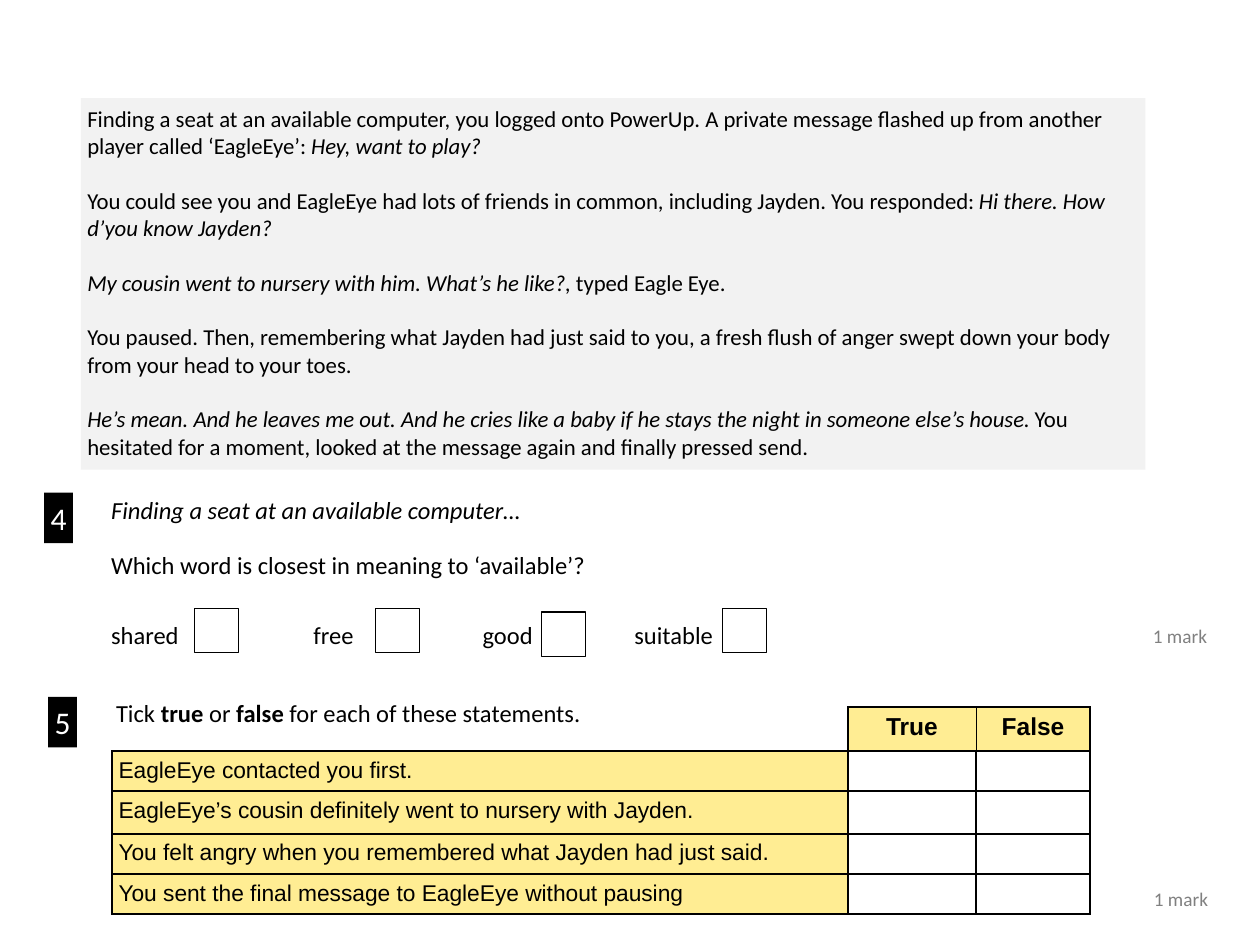
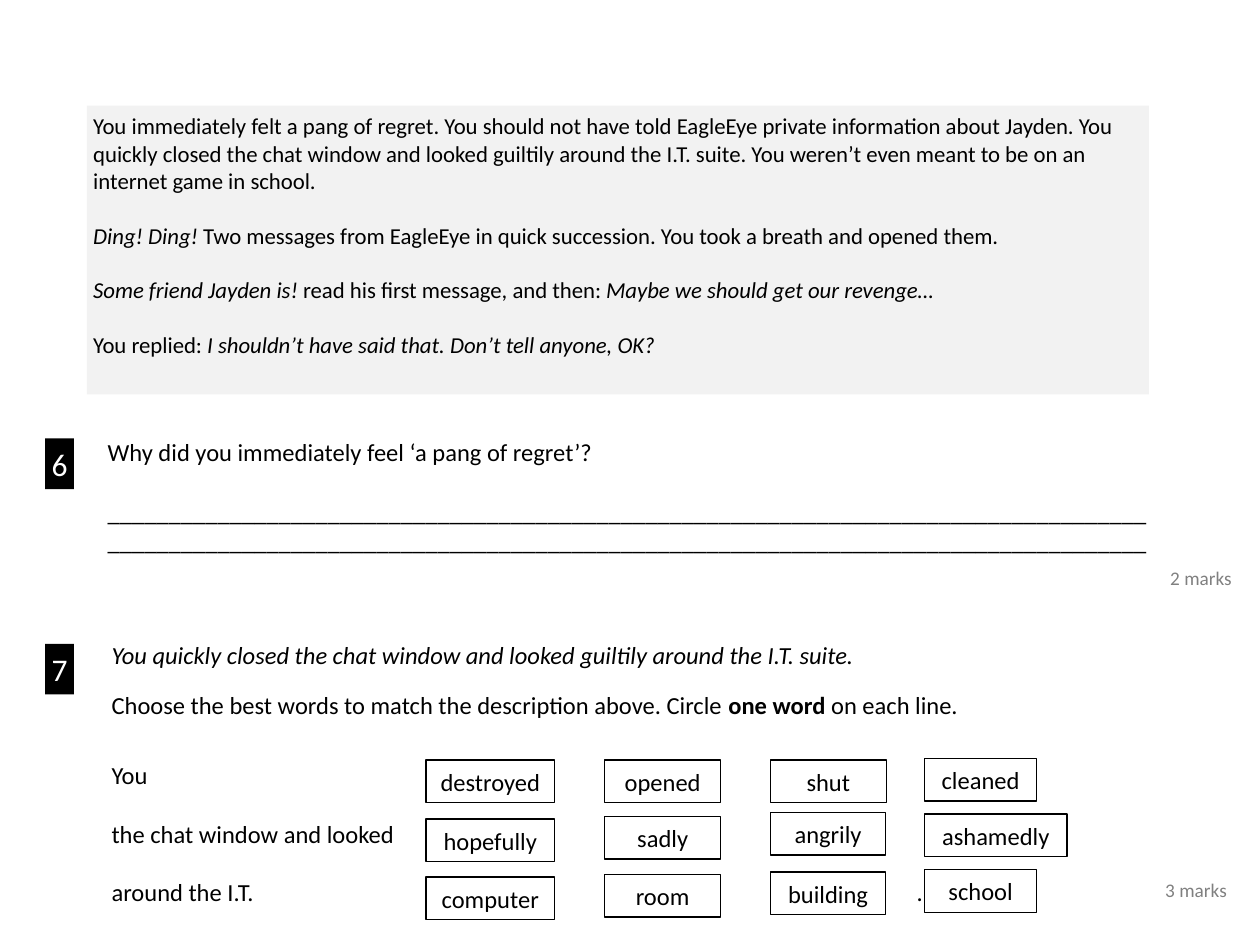
from dataclasses import dataclass

import pptx
import pptx.dml.color
import pptx.enum.shapes
import pptx.enum.text
import pptx.oxml
import pptx.oxml.ns
import pptx.util

Cm = pptx.util.Cm
Pt = pptx.util.Pt
ALIGN = pptx.enum.text.PP_ALIGN
ANCHOR = pptx.enum.text.MSO_ANCHOR

COLOURS = {
    "ink": "000000",
    "paper": "FFFFFF",
    "panel": "F2F2F2",
    "cream": "FFED93",
    "mark": "808080",
}
BODY, GRID = "Calibri", "Arial"
INSET = 0.13


@dataclass
class Box:
    """A block of text; *...* is italic and #...# is bold."""
    left: float
    top: float
    width: float
    height: float
    lines: tuple[str, ...] = ()
    gaps: tuple[float, ...] = ()
    size: float = 14
    ink: str = "ink"
    fill: str = ""
    edge: bool = False
    centre: bool = False
    wrap: bool = True
    side: float = INSET


def shade(name: str) -> pptx.dml.color.RGBColor:
    return pptx.dml.color.RGBColor.from_string(COLOURS[name])


def write(para, line: str, size: float, ink: str, face: str = BODY) -> None:
    parts = [
        (text, n % 2 == 1, m % 2 == 1)
        for n, chunk in enumerate(line.split("*"))
        for m, text in enumerate(chunk.split("#"))
        if text
    ]
    para.text = parts[0][0]
    for text, _, _ in parts[1:]:
        para.add_run().text = text
    for run, (_, slant, bold) in zip(para.runs, parts):
        run.font.name = face
        run.font.size = Pt(size)
        run.font.italic = slant
        run.font.bold = bold
        run.font.color.rgb = shade(ink)


def draw(slide, box: Box) -> None:
    place = [Cm(n) for n in (box.left, box.top, box.width, box.height)]
    if box.fill or box.edge:
        shape = slide.shapes.add_shape(
            pptx.enum.shapes.MSO_SHAPE.RECTANGLE, *place)
        shape.shadow.inherit = False
        if box.fill:
            shape.fill.solid()
            shape.fill.fore_color.rgb = shade(box.fill)
        else:
            shape.fill.background()
        if box.edge:
            shape.line.color.rgb = shade("ink")
            shape.line.width = Pt(0.75)
        else:
            shape.line.fill.background()
    else:
        shape = slide.shapes.add_textbox(*place)
    if not box.lines:
        return
    frame = shape.text_frame
    frame.word_wrap = box.wrap
    frame.margin_left = frame.margin_right = Cm(box.side)
    frame.margin_top = frame.margin_bottom = Cm(INSET)
    frame.vertical_anchor = ANCHOR.MIDDLE if box.centre else ANCHOR.TOP
    frame.text = "\n".join(box.lines)
    for n, (para, line) in enumerate(zip(frame.paragraphs, box.lines)):
        write(para, line, box.size, box.ink)
        para.alignment = ALIGN.CENTER if box.centre else ALIGN.LEFT
        if n and box.gaps:
            para.space_before = Pt(box.gaps[n - 1])


# Kinds of block that recur on both slides
def panel(left: float, top: float, width: float, height: float,
          *lines: str) -> Box:
    gaps = (15.6,) * (len(lines) - 1)
    return Box(left, top, width, height, lines, gaps, 13, fill="panel")


def badge(left: float, top: float, text: str) -> Box:
    return Box(left, top, 0.58, 1.02, (text,), size=18, ink="paper",
               fill="ink", wrap=False)


def score(left: float, top: float, width: float, text: str) -> Box:
    return Box(left, top, width, 0.74, (text,), size=11, ink="mark",
               wrap=False, side=0.25)


def label(left: float, top: float, text: str) -> Box:
    return Box(left, top, 2.2, 0.86, (text,), wrap=False)


def tick(left: float, top: float) -> Box:
    return Box(left, top, 0.89, 0.89, edge=True)


def word(left: float, top: float, width: float, text: str) -> Box:
    return Box(left, top, width, 0.86, (text,), fill="paper", edge=True,
               centre=True)


# True or false table
WIDTHS = (14.83, 2.59, 2.29)
HEIGHTS = (0.89, 0.81, 0.86, 0.81, 0.81)
ROWS = (
    ("", "#True#", "#False#"),
    ("EagleEye contacted you first.", "", ""),
    ("EagleEye’s cousin definitely went to nursery with Jayden.", "", ""),
    ("You felt angry when you remembered what Jayden had just said.", "", ""),
    ("You sent the final message to EagleEye without pausing", "", ""),
)


def border(cell, side: str, name: str, width: float) -> None:
    cell._tc.get_or_add_tcPr().append(pptx.oxml.parse_xml(
        f'<a:ln{side} {pptx.oxml.ns.nsdecls("a")} w="{Pt(width)}">'
        f'<a:solidFill><a:srgbClr val="{COLOURS[name]}"/></a:solidFill>'
        f'</a:ln{side}>'))


def edges(cell, row: int, col: int) -> None:
    blank = row == 0 and col == 0
    thick = 1.5 if row and col else 1
    widths = {"L": 1 if col == 1 else thick, "R": thick,
              "T": 1 if row == 1 else thick, "B": thick}
    for side, width in widths.items():
        if blank and side in "LT":
            border(cell, side, "paper", 1.5)
        else:
            border(cell, side, "ink", width)


def grid(slide, left: float, top: float) -> None:
    table = slide.shapes.add_table(
        len(ROWS), len(WIDTHS), Cm(left), Cm(top),
        Cm(sum(WIDTHS)), Cm(sum(HEIGHTS))).table
    table.first_row = table.horz_banding = False
    for col, width in zip(table.columns, WIDTHS):
        col.width = Cm(width)
    for r, (line, height) in enumerate(zip(ROWS, HEIGHTS)):
        table.rows[r].height = Cm(height)
        for c, text in enumerate(line):
            cell = table.cell(r, c)
            edges(cell, r, c)
            cell.margin_left = cell.margin_right = Cm(INSET)
            cell.margin_top = cell.margin_bottom = Cm(INSET)
            para = cell.text_frame.paragraphs[0]
            if not text:
                cell.fill.background()
                para._p.get_or_add_endParaRPr().set("sz", "1000")
                continue
            cell.fill.solid()
            cell.fill.fore_color.rgb = shade("cream")
            write(para, text, 13 if r else 14, "ink", GRID)
            para.alignment = ALIGN.LEFT if r else ALIGN.CENTER


# Slide 1: questions 4 and 5
FIRST = [
    panel(
        1.63, 1.98, 21.46, 7.49,
        "Finding a seat at an available computer, you logged onto PowerUp. "
        "A private message flashed up from another player called "
        "‘EagleEye’: *Hey, want to play?*",
        "You could see you and EagleEye had lots of friends in common, "
        "including Jayden. You responded: "
        "*Hi there. How d’you know Jayden?*",
        "*My cousin went to nursery with him. What’s he like?, *"
        "typed Eagle Eye.",
        "You paused. Then, remembering what Jayden had just said to you, "
        "a fresh flush of anger swept down your body from your head to "
        "your toes.",
        "*He’s mean. And he leaves me out. And he cries like a baby if he "
        "stays the night in someone else’s house. *You hesitated for a "
        "moment, looked at the message again and finally pressed send.",
    ),
    badge(0.89, 9.93, "4"),
    Box(2.11, 9.85, 22.71, 2.1,
        ("*Finding a seat at an available computer…*",
         "Which word is closest in meaning to ‘available’?"), (14.6,)),
    label(2.11, 12.37, "shared"), tick(3.92, 12.27),
    label(6.19, 12.37, "free"), tick(7.57, 12.27),
    label(9.6, 12.37, "good"), tick(10.92, 12.34),
    label(12.66, 12.37, "suitable"), tick(14.56, 12.27),
    badge(0.97, 14.05, "5"),
    Box(2.21, 13.94, 14.5, 0.86,
        ("Tick #true# or #false# for each of these statements.",)),
    score(22.99, 12.46, 1.63, "1 mark"),
    score(23.01, 17.75, 1.63, "1 mark"),
]

# Slide 2: questions 6 and 7
RULE = "_" * 85
NEXT = [
    panel(
        1.75, 2.13, 21.41, 5.82,
        "You immediately felt a pang of regret. You should not have told "
        "EagleEye private information about Jayden. You quickly closed the "
        "chat window and looked guiltily around the I.T. suite. You weren’t "
        "even meant to be on an internet game in school.",
        "*Ding! Ding! *Two messages from EagleEye in quick succession. "
        "You took a breath and opened them.",
        "*Some friend Jayden is! *read his first message, and then: "
        "*Maybe we should get our revenge…*",
        "You replied: *I shouldn’t have said that. Don’t tell anyone, OK?*",
    ),
    badge(0.91, 8.84, "6"),
    Box(2.04, 8.69, 21.9, 3.84,
        ("Why did you immediately feel ‘a pang of regret’?", RULE, RULE),
        (17.1, 0)),
    score(23.34, 11.28, 1.78, "2 marks"),
    badge(0.91, 12.98, "7"),
    Box(2.12, 12.78, 21.9, 5.69,
        ("*You quickly closed the chat window and looked guiltily around "
         "the I.T. suite.*",
         "Choose the best words to match the description above. "
         "Circle# one word #on each line.",
         "You", "the chat window and looked", "around the I.T."),
        (11.8, 23, 16.8, 16.4)),
    Box(18.35, 17.56, 0.5, 0.86, (".",)),
    word(8.59, 15.32, 2.59, "destroyed"),
    word(12.19, 15.32, 2.34, "opened"),
    word(15.53, 15.32, 2.34, "shut"),
    word(18.64, 15.29, 2.26, "cleaned"),
    word(8.59, 16.51, 2.59, "hopefully"),
    word(12.19, 16.46, 2.34, "sadly"),
    word(15.54, 16.38, 2.31, "angrily"),
    word(18.64, 16.41, 2.87, "ashamedly"),
    word(8.59, 17.68, 2.59, "computer"),
    word(12.19, 17.63, 2.34, "room"),
    word(15.54, 17.58, 2.31, "building"),
    word(18.64, 17.53, 2.26, "school"),
    score(23.24, 17.58, 1.78, "3 marks"),
]


def main() -> None:
    deck = pptx.Presentation()
    deck.slide_width, deck.slide_height = Cm(25.4), Cm(19.05)
    for boxes in (FIRST, NEXT):
        slide = deck.slides.add_slide(deck.slide_layouts[6])
        # The table lies behind the question text
        if boxes is FIRST:
            grid(slide, 2.26, 14.25)
        for box in boxes:
            draw(slide, box)
    deck.save("out.pptx")


if __name__ == "__main__":
    main()
